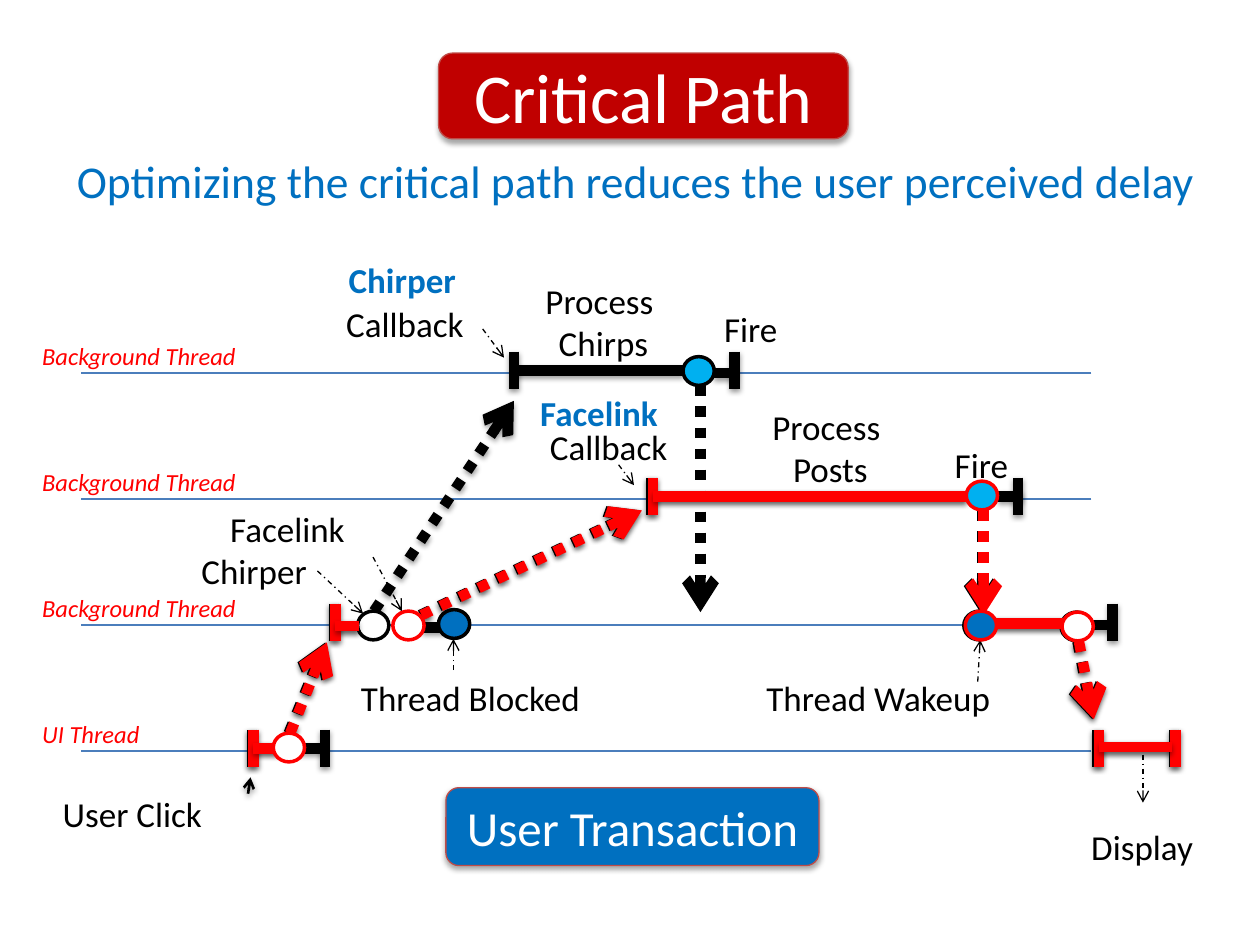
import lxml.etree
import pptx
import pptx.dml.color
import pptx.enum.dml
import pptx.enum.shapes
import pptx.enum.text
import pptx.oxml.ns
import pptx.util

Cm, Pt = pptx.util.Cm, pptx.util.Pt
DASH = pptx.enum.dml.MSO_LINE
ALIGN = pptx.enum.text.PP_ALIGN
SHAPE = pptx.enum.shapes.MSO_SHAPE

COLORS = {
    "black": "000000", "white": "FFFFFF", "red": "FF0000", "blue": "0070C0",
    "sky": "00B0F0", "lane": "4B7EBC", "banner": "C00000", "edge": "BF4C48",
}

# Thread lanes, from top to bottom, one per 2.54 cm
TWEETS, POSTS, DISPATCH, UI = (7.52 + 2.54 * index for index in range(4))

# Ticks: x, lane
SIDE_TICKS = [(6.55, UI), (22.43, DISPATCH), (20.52, POSTS),
              (10.36, TWEETS), (14.81, TWEETS)]
CRITICAL_TICKS = [(5.08, UI), (6.73, DISPATCH), (13.13, POSTS),
                  (22.12, UI), (23.67, UI)]

# Work bars: start x, end x, y
SIDE_BARS = [(5.89, 6.55, 15.09), (8.51, 9.04, 12.65), (21.72, 22.38, 12.6),
             (20.12, 20.62, 10.01), (14.4, 14.86, 7.52), (10.36, 13.77, 7.47)]
CRITICAL_BARS = [(5.07, 5.73, 15.09), (6.73, 7.24, 12.62), (19.8, 21.72, 12.57),
                 (13.13, 19.48, 10.01), (22.12, 23.62, 15.06)]

# Hand-over arrows: start x, start y, end x, end y, shadow
SIDE_ARROWS = [(7.54, 12.32, 10.36, 8.08, True), (14.12, 7.77, 14.12, 12.34, False)]
CRITICAL_ARROWS = [(5.82, 14.78, 6.56, 12.95, True), (8.47, 12.4, 12.91, 10.29, True),
                   (19.8, 10.29, 19.8, 12.4, False), (21.72, 12.93, 22.02, 14.5, True)]

# Events: left, top, fill
SIDE_EVENTS = [(8.84, 12.29, "blue"), (7.21, 12.32, "white"), (13.77, 7.19, "sky"),
               (21.39, 12.34, "white"), (19.43, 12.32, "blue")]
CRITICAL_EVENTS = [(7.92, 12.32, "white"), (5.51, 14.78, "white"),
                   (21.41, 12.34, "white"), (19.48, 9.7, "sky"), (19.46, 12.32, "blue")]

# Thin pointers from labels: start x, start y, end x, end y
POINTERS = [(9.14, 13.51, 9.14, 12.88), (19.71, 13.74, 19.76, 12.9),
            (23.04, 15.21, 23.04, 16.18), (7.52, 11.23, 8.1, 12.32),
            (9.73, 6.63, 10.16, 7.21), (12.47, 9.37, 12.78, 9.78),
            (6.4, 11.51, 7.32, 12.37)]

# Labels: text, left, top, width, format
CENTER = {"align": ALIGN.CENTER}
HEADING = {"color": "blue", "bold": True}
LABELS = [
    ("User Click", 0.97, 15.85, 3.4, CENTER),
    ("Chirper", 3.81, 10.95, 2.64, {}),
    ("Facelink", 4.39, 10.11, 3.38, {}),
    ("Thread Wakeup", 14.86, 13.51, 5.69, CENTER),
    ("Thread Blocked", 6.78, 13.51, 5.41, CENTER),
    ("Fire", 14.17, 6.07, 1.93, CENTER),
    ("Fire", 18.82, 8.81, 1.93, CENTER),
    ("Callback", 6.73, 5.97, 3.0, {}),
    ("Callback", 10.77, 8.46, 3.0, CENTER),
    ("Chirper", 6.78, 5.08, 2.74, HEADING),
    ("Facelink", 10.64, 7.77, 3.48, HEADING),
    ("Process \nPosts", 15.29, 8.05, 2.9, CENTER),
    ("Process \nChirps", 9.32, 5.51, 5.69, CENTER),
    ("Display", 21.69, 16.51, 2.67, CENTER),
]


def rgb(name):
    return pptx.dml.color.RGBColor.from_string(COLORS[name])


def write_text(shape, text, size=20, color="black", bold=False, italic=False,
               align=ALIGN.LEFT):
    shape.text_frame.text = text
    for paragraph in shape.text_frame.paragraphs:
        paragraph.alignment = align
        font = paragraph.runs[0].font
        font.name, font.size = "Calibri", Pt(size)
        font.bold, font.italic = bold, italic
        font.color.rgb = rgb(color)


def set_effects(shape, shadow, opacity=38, distance=1.6):
    """Give the shape a soft shadow straight below it, or none."""
    qn = pptx.oxml.ns.qn
    effects = lxml.etree.SubElement(shape._element.spPr, qn("a:effectLst"))
    if shadow:
        outer = lxml.etree.SubElement(
            effects, qn("a:outerShdw"), blurRad=str(Pt(3.1)),
            dist=str(Pt(distance)), dir="5400000", rotWithShape="0")
        tone = lxml.etree.SubElement(outer, qn("a:srgbClr"), val=COLORS["black"])
        lxml.etree.SubElement(tone, qn("a:alpha"), val=str(opacity * 1000))


def add_label(slide, text, left, top, width, height=1.12, **style):
    box = slide.shapes.add_textbox(Cm(left), Cm(top), Cm(width), Cm(height))
    box.text_frame.word_wrap = False
    write_text(box, text, **style)


def add_line(slide, x1, y1, x2, y2, color="black", width=6.0, dash=None,
             arrow=False, shadow=True):
    line = slide.shapes.add_connector(
        pptx.enum.shapes.MSO_CONNECTOR.STRAIGHT, Cm(x1), Cm(y1), Cm(x2), Cm(y2))
    line.line.color.rgb = rgb(color)
    line.line.width = Pt(width)
    if dash is not None:
        line.line.dash_style = dash
    if arrow:
        lxml.etree.SubElement(line.line._get_or_add_ln(),
                              pptx.oxml.ns.qn("a:tailEnd"), type="arrow")
    set_effects(line, shadow)


def add_filled(slide, kind, left, top, width, height, fill, edge, edge_width):
    shape = slide.shapes.add_shape(kind, Cm(left), Cm(top), Cm(width), Cm(height))
    shape.fill.solid()
    shape.fill.fore_color.rgb = rgb(fill)
    shape.line.color.rgb = rgb(edge)
    shape.line.width = Pt(edge_width)
    return shape


def add_event(slide, left, top, fill, edge):
    event = add_filled(slide, SHAPE.OVAL, left, top, 0.63, 0.58, fill, edge, 2)
    set_effects(event, False)


def add_banner(slide, left, top, width, height, fill):
    banner = add_filled(slide, SHAPE.ROUNDED_RECTANGLE, left, top, width, height,
                        fill, "edge", 0.75)
    set_effects(banner, True, opacity=35, distance=1.8)
    return banner


def add_trace(slide, ticks, bars, arrows, color, shift=0.0):
    for x, lane in ticks:
        add_line(slide, x + shift, lane - 0.43, x + shift, lane + 0.33, color)
    for start, end, y in bars:
        add_line(slide, start + shift, y, end, y, color)
    for x1, y1, x2, y2, shadow in arrows:
        add_line(slide, x1 + shift, y1, x2 + shift, y2, color,
                 dash=DASH.ROUND_DOT, arrow=True, shadow=shadow)


def add_title(slide):
    frame = (8.84, 1.07, 8.26, 1.73)
    add_banner(slide, *frame, "banner")
    title = slide.shapes.title
    title.left, title.top, title.width, title.height = map(Cm, frame)
    title.text_frame.auto_size = pptx.enum.text.MSO_AUTO_SIZE.NONE
    title.text_frame.vertical_anchor = pptx.enum.text.MSO_ANCHOR.MIDDLE
    write_text(title, "Critical Path", size=40, color="white", align=ALIGN.CENTER)
    slide.shapes._spTree.append(title._element)  # in front of its banner


def main():
    presentation = pptx.Presentation()
    presentation.slide_width, presentation.slide_height = Cm(25.4), Cm(19.05)
    slide = presentation.slides.add_slide(presentation.slide_layouts[5])

    # Thread lanes
    for lane in (UI, DISPATCH, POSTS, TWEETS):
        name = "UI Thread" if lane == UI else "Background Thread"
        add_line(slide, 22, lane, 1.63, lane, "lane", 0.75, shadow=False)
        add_label(slide, name, 0.6, lane - 0.77, 4.52, 0.86,
                  size=14, color="red", italic=True)

    # All work in black, events over their arrows
    add_trace(slide, SIDE_TICKS + CRITICAL_TICKS, SIDE_BARS + CRITICAL_BARS,
              SIDE_ARROWS + CRITICAL_ARROWS, "black")
    for event in SIDE_EVENTS:
        add_event(slide, *event, "black")

    # Labels and pointers
    for text, left, top, width, style in LABELS:
        add_label(slide, text, left, top, width, **style)
    for pointer in POINTERS:
        add_line(slide, *pointer, width=0.75, dash=DASH.DASH_DOT,
                 arrow=True, shadow=False)
    add_line(slide, 5, 16, 5.05, 15.67, width=1.5, arrow=True)

    # Critical path in red on top
    add_trace(slide, CRITICAL_TICKS, CRITICAL_BARS, CRITICAL_ARROWS, "red", shift=0.03)
    for event in CRITICAL_EVENTS:
        add_event(slide, *event, "red")

    # Title, message and caption
    add_title(slide)
    add_label(slide, "Optimizing the critical path reduces the user perceived delay",
              1.3, 2.97, 23.24, 1.37, size=26, color="blue")
    caption = add_banner(slide, 8.99, 15.88, 7.52, 1.57, "blue")
    write_text(caption, "User Transaction", size=28, color="white", align=ALIGN.CENTER)

    presentation.save("out.pptx")


if __name__ == "__main__":
    main()
